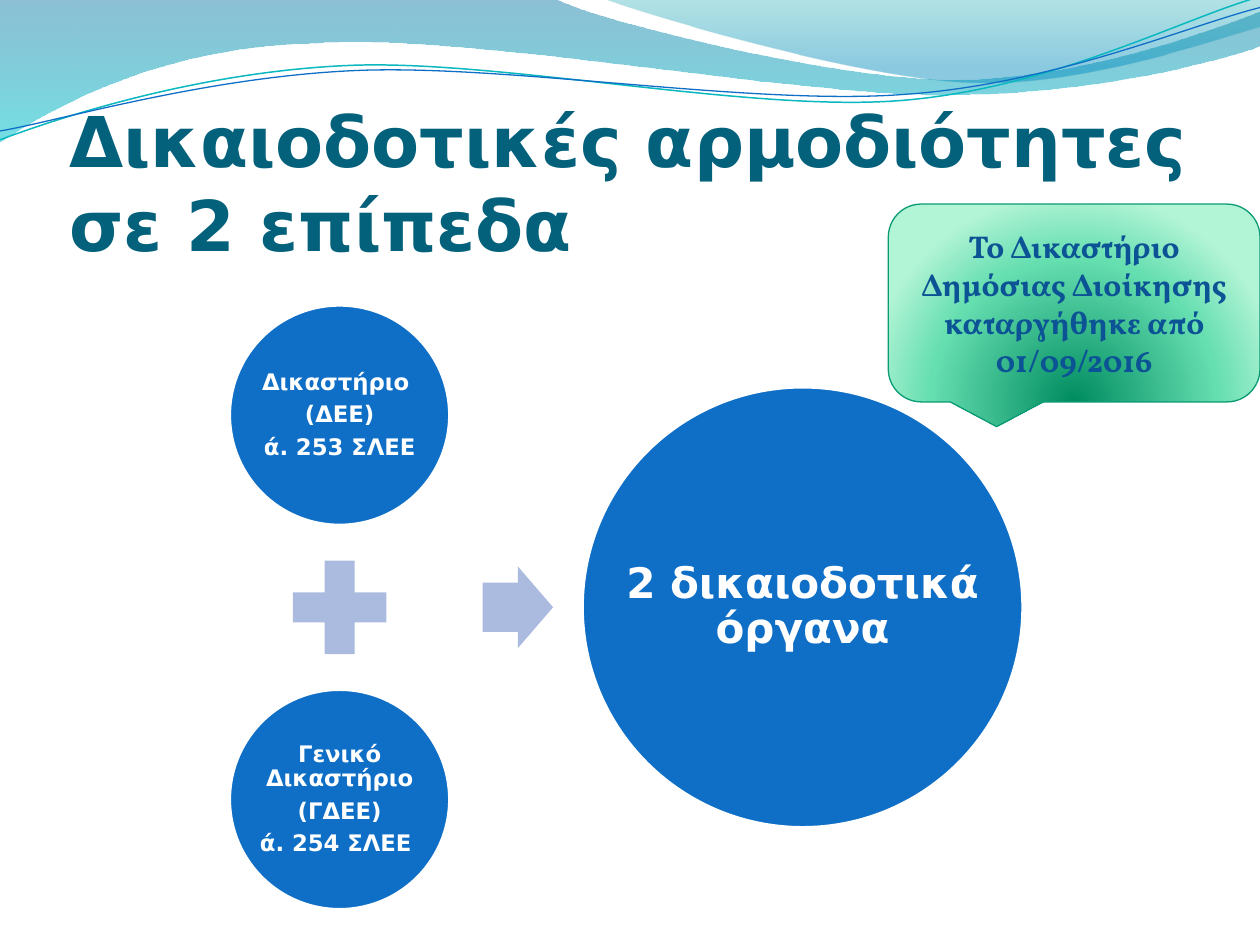
from lxml import etree
from pptx import Presentation
from pptx import oxml
from pptx import util as u
from pptx.dml.color import RGBColor
from pptx.enum import shapes, text
from pptx.oxml.ns import nsdecls, qn

FONT = "DejaVu Sans"
BLUE, PALE, WHITE = "0F6FC6", "ABBBDF", "FFFFFF"
DOWN = '<a:lin ang="5400000" scaled="0"/>'
GLOW = ('<a:path path="circle"><a:fillToRect l="50000" t="130000" '
        'r="50000" b="-30000"/></a:path>')


def rgb(hex_code):
    """Turn a hex string into a colour."""
    return RGBColor.from_string(hex_code)


def paint(sp, fill=None, line=None, width=1):
    """Give a shape a flat fill and a line, or neither, and no shadow."""
    sp.shadow.inherit = False
    if fill:
        sp.fill.solid()
        sp.fill.fore_color.rgb = rgb(fill)
    else:
        sp.fill.background()
    if line:
        sp.line.color.rgb = rgb(line)
        sp.line.width = u.Pt(width)
    else:
        sp.line.fill.background()


def paint_gradient(sp, stops, direction):
    """Fill a shape with (position, colour, opacity) stops."""
    sp.fill.gradient()
    old = sp._element.spPr.find(qn("a:gradFill"))
    marks = "".join(
        f'<a:gs pos="{pos * 1000}"><a:srgbClr val="{colour}">'
        f'<a:alpha val="{opacity * 1000}"/></a:srgbClr></a:gs>'
        for pos, colour, opacity in stops)
    new = oxml.parse_xml(
        f'<a:gradFill {nsdecls("a")} rotWithShape="1">'
        f"<a:gsLst>{marks}</a:gsLst>{direction}</a:gradFill>")
    old.getparent().replace(old, new)


def write(sp, lines, size, font, colour, spacing=None, after=0, inset=None):
    """Write bold centred paragraphs in the middle of a shape."""
    tf = sp.text_frame
    tf.word_wrap = True
    tf.vertical_anchor = text.MSO_ANCHOR.MIDDLE
    if inset is not None:
        tf.margin_left = tf.margin_right = u.Inches(inset)
        tf.margin_top = tf.margin_bottom = u.Inches(inset)
    tf.text = "\n".join(lines)
    for p in tf.paragraphs:
        p.alignment = text.PP_ALIGN.CENTER
        p.line_spacing = spacing
        p.space_after = u.Pt(after)
        for r in p.runs:
            r.font.size, r.font.name, r.font.bold = u.Pt(size), font, True
            r.font.color.rgb = rgb(colour)


def add_shape(s, kind, x, y, w, h):
    """Add a preset shape measured in inches."""
    return s.shapes.add_shape(kind, u.Inches(x), u.Inches(y), u.Inches(w), u.Inches(h))


def add_curve(s, start, segments, closed):
    """Trace a freeform of straight (2 numbers) and Bezier (6 numbers) segments."""
    builder = s.shapes.build_freeform(*map(u.Inches, start), scale=1.0)
    builder.add_line_segments([tuple(map(u.Inches, seg[-2:])) for seg in segments],
                              close=closed)
    sp = builder.convert_to_shape()
    for step, seg in zip(list(sp._element.iter(qn("a:lnTo"))), segments):
        if len(seg) == 2:
            continue
        bend = etree.Element(qn("a:cubicBezTo"))
        for x, y in zip(seg[::2], seg[1::2]):
            etree.SubElement(bend, qn("a:pt"), x=str(u.Inches(x) - sp.left),
                             y=str(u.Inches(y) - sp.top))
        step.getparent().replace(step, bend)
    return sp


def add_waves(s):
    """Draw the translucent waves and thin lines along the top edge."""
    bands = [
        ((0, 0), [(4.4, -0.01), (4.76, 0.17, 6.64, 0.63, 7.58, 0.63),
                  (8.53, 0.63, 9.58, 0.26, 10, 0.09), (10.01, 0.36),
                  (9.83, 0.44, 8.7, 0.76, 7.46, 0.75),
                  (6.22, 0.75, 3.82, 0.28, 2.57, 0.34),
                  (1.29, 0.36, 0.46, 0.83, -0.01, 1.13)],
         [(0, "0074A1", 45), (100, "00C6CF", 55)]),
        ((4.79, -0.01), [(5.09, 0.11, 6.82, 0.62, 7.69, 0.65),
                         (8.56, 0.69, 9.61, 0.32, 10, 0.21), (10, 0)],
         [(0, "00A1A9", 30), (80, "008BBF", 45)]),
    ]
    for start, segments, stops in bands:
        sp = add_curve(s, start, segments, True)
        paint(sp)
        paint_gradient(sp, stops, DOWN)
    lines = [
        ((0, 1.11), [(0.48, 0.93, 1.58, 0.57, 2.77, 0.52),
                     (3.95, 0.47, 5.93, 0.89, 7.13, 0.8),
                     (8.33, 0.71, 9.38, 0.15, 9.98, -0.02)], "0AB8BF", 0.85),
        ((0, 1.04), [(0.47, 0.96, 1.64, 0.61, 2.83, 0.56),
                     (4.03, 0.51, 5.97, 0.84, 7.17, 0.75),
                     (8.36, 0.67, 9.41, 0.21, 10, 0.06)], BLUE, 0.75),
    ]
    for start, segments, colour, width in lines:
        paint(add_curve(s, start, segments, False), line=colour, width=width)


def add_title(s, x, y, w, h):
    """Place the title above the waves."""
    sp = s.shapes.title
    s.shapes._spTree.append(sp._element)
    sp.left, sp.top, sp.width, sp.height = map(u.Inches, (x, y, w, h))
    tf = sp.text_frame
    tf.text = "Δικαιοδοτικές αρμοδιότητες σε 2 επίπεδα"
    tf.word_wrap, tf.auto_size = True, text.MSO_AUTO_SIZE.NONE
    tf.vertical_anchor = text.MSO_ANCHOR.BOTTOM
    tf.margin_left = tf.margin_right = tf.margin_bottom = 0
    p = tf.paragraphs[0]
    p.alignment = text.PP_ALIGN.LEFT
    font = p.runs[0].font
    font.size, font.name, font.bold = u.Pt(40), FONT, True
    font.color.rgb = rgb("04617B")


def add_circle(s, x, y, size, lines, points, inset):
    """Draw a blue circle with its label across the full diameter."""
    paint(add_shape(s, shapes.MSO_SHAPE.OVAL, x, y, size, size), BLUE, WHITE, 2)
    label = s.shapes.add_textbox(*map(u.Inches, (x, y, size, size)))
    write(label, lines, points, FONT, WHITE, spacing=0.9, after=4.5, inset=inset)


def add_equation(s, x, y, w, h):
    """Draw two courts joined by a plus, and an arrow to their sum."""
    small, large, plus, arrow_w, arrow_h = 1.75, 3.5, 1.01, 0.56, 0.65
    middle = y + h / 2
    add_circle(s, x, y, small, ["Δικαστήριο ", "(ΔΕΕ)", "ά. 253 ΣΛΕΕ"], 13, 0.02)
    paint(add_shape(s, shapes.MSO_SHAPE.MATH_PLUS, x + (small - plus) / 2,
                    middle - plus / 2, plus, plus), PALE)
    add_circle(s, x, y + h - small, small,
               ["Γενικό Δικαστήριο", "(ΓΔΕΕ)", "ά. 254 ΣΛΕΕ "], 13, 0.02)
    arrow = add_shape(s, shapes.MSO_SHAPE.RIGHT_ARROW, x + 2.01,
                      middle - arrow_h / 2, arrow_w, arrow_h)
    arrow.adjustments[0] = 0.6
    paint(arrow, PALE)
    add_circle(s, x + w - large, middle - large / 2, large,
               ["2 δικαιοδοτικά όργανα"], 24, 0.03)


def add_callout(s, x, y, w, h):
    """Draw the green note about the abolished court."""
    sp = add_shape(s, shapes.MSO_SHAPE.ROUNDED_RECTANGULAR_CALLOUT, x, y, w, h)
    paint(sp, line="0A9B74", width=0.75)
    paint_gradient(sp, [(0, "008C60", 100), (68, "65DEB0", 100),
                        (100, "B2F4D6", 100)], GLOW)
    write(sp, ["Το Δικαστήριο Δημόσιας Διοίκησης καταργήθηκε από 01/09/2016"],
          18, "Vollkorn", "0B5394")


def main():
    """Build the slide and save it."""
    prs = Presentation()
    prs.slide_width, prs.slide_height = u.Inches(10), u.Inches(7.5)
    s = prs.slides.add_slide(prs.slide_layouts[5])
    add_waves(s)
    add_title(s, 0.55, 0.7, 9, 1.41)
    add_equation(s, 1.82, 2.42, 6.3, 4.8)
    add_callout(s, 7.05, 1.62, 2.95, 1.57)
    prs.save("out.pptx")


if __name__ == "__main__":
    main()
